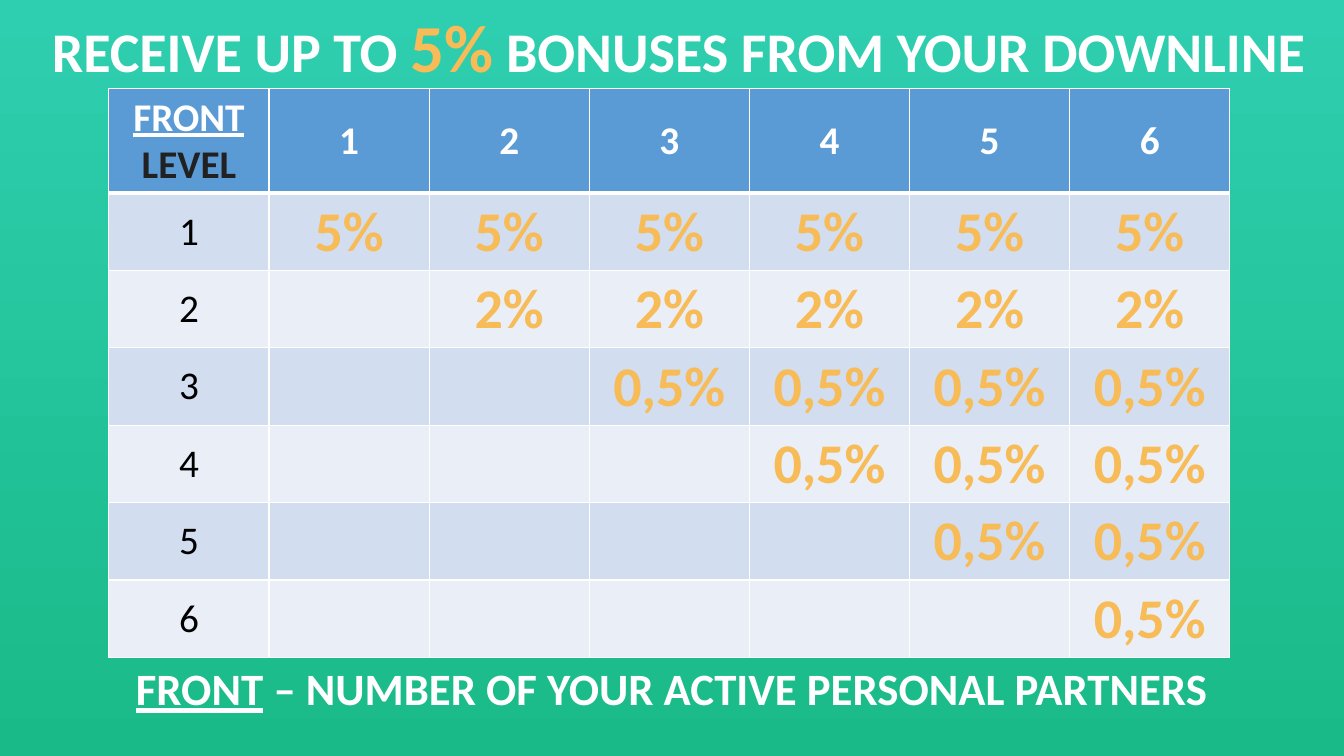
from dataclasses import dataclass

from lxml import etree
from pptx import Presentation
from pptx import util as u
from pptx.dml.color import RGBColor
from pptx.enum import text
from pptx.oxml import ns


@dataclass(frozen=True)
class Theme:
    """Colours, type sizes and font of the slide."""
    font: str = "Calibri"
    white: str = "FFFFFF"
    black: str = "000000"
    dark: str = "212121"
    accent: str = "F7BB57"
    header: str = "5B9BD5"
    bands: tuple = ("D2DEEF", "EAEFF7")
    gradient: tuple = ("2ECEB0", "1ABA88")
    title: int = 40
    highlight: int = 48
    label: int = 28
    rate: int = 40
    caption: int = 32


THEME = Theme()
RATES = ("5%", "2%", "0,5%", "0,5%", "0,5%", "0,5%")


def paint_background(slide):
    """Fill the slide with a gradient running from top to bottom."""
    fill = slide.background.fill
    fill.gradient()
    fill.gradient_angle = 270
    for position, (stop, color) in enumerate(zip(fill.gradient_stops, THEME.gradient)):
        stop.position = position
        stop.color.rgb = RGBColor.from_string(color)


def style_font(font, size, color, bold=True):
    """Set the typeface, size, colour and weight of a font."""
    font.name = THEME.font
    font.size = u.Pt(size)
    font.bold = bold
    font.color.rgb = RGBColor.from_string(color)


def place_shape(shape, left, top, width, height):
    """Move a shape to its box, given in inches."""
    shape.left, shape.top = u.Inches(left), u.Inches(top)
    shape.width, shape.height = u.Inches(width), u.Inches(height)


def write_line(shape, size):
    """Prepare a centred one-line frame and return its paragraph."""
    frame = shape.text_frame
    frame.word_wrap = True
    frame.auto_size = text.MSO_AUTO_SIZE.SHAPE_TO_FIT_TEXT
    frame.vertical_anchor = text.MSO_ANCHOR.TOP
    paragraph = frame.paragraphs[0]
    paragraph.alignment = text.PP_ALIGN.CENTER
    style_font(paragraph.font, size, THEME.white)
    return paragraph


def add_title(slide, left, top, width, height):
    """Write the heading with its enlarged percentage."""
    place_shape(slide.shapes.title, left, top, width, height)
    paragraph = write_line(slide.shapes.title, THEME.title)
    paragraph.add_run().text = "RECEIVE UP TO "
    percentage = paragraph.add_run()
    percentage.text = "5%"
    style_font(percentage.font, THEME.highlight, THEME.accent)
    paragraph.add_run().text = " BONUSES FROM YOUR DOWNLINE"


def add_caption(slide, left, top, width, height):
    """Write the explanation of the word FRONT."""
    box = slide.shapes.add_textbox(*map(u.Inches, (left, top, width, height)))
    paragraph = write_line(box, THEME.caption)
    term = paragraph.add_run()
    term.text = "FRONT"
    term.font.underline = True
    paragraph.add_run().text = " – NUMBER OF YOUR ACTIVE PERSONAL PARTNERS"


def set_borders(cell, top, bottom):
    """Draw white cell borders with the given top and bottom widths."""
    properties = cell._tc.get_or_add_tcPr()
    widths = {"L": 1, "R": 1, "T": top, "B": bottom}
    for index, (side, width) in enumerate(widths.items()):
        line = etree.Element(ns.qn(f"a:ln{side}"), w=str(u.Pt(width)))
        fill = etree.SubElement(line, ns.qn("a:solidFill"))
        etree.SubElement(fill, ns.qn("a:srgbClr"), val=THEME.white)
        properties.insert(index, line)


def write_cell(cell, content, size, color, bold=True):
    """Write centred text in a table cell."""
    cell.text = content
    cell.vertical_anchor = text.MSO_ANCHOR.MIDDLE
    for paragraph in cell.text_frame.paragraphs:
        paragraph.alignment = text.PP_ALIGN.CENTER
        style_font(paragraph.font, size, color, bold)


def write_corner(cell):
    """Label both axes of the table in its corner cell."""
    write_cell(cell, "FRONT\nLEVEL", THEME.label, THEME.white)
    cell.vertical_anchor = text.MSO_ANCHOR.TOP
    front, level = cell.text_frame.paragraphs
    front.font.underline = True
    level.font.color.rgb = RGBColor.from_string(THEME.dark)


def add_bonus_table(slide, left, top, width, height, header_height=1.03):
    """Build the grid of bonus rates by level and front."""
    count = len(RATES) + 1
    box = map(u.Inches, (left, top, width, height))
    table = slide.shapes.add_table(count, count, *box).table
    for column in table.columns:
        column.width = u.Inches(width / count)
    for row in table.rows:
        row.height = u.Inches((height - header_height) / len(RATES))
    table.rows[0].height = u.Inches(header_height)

    for level in range(count):
        color = THEME.bands[(level - 1) % 2] if level else THEME.header
        for front in range(count):
            cell = table.cell(level, front)
            cell.fill.solid()
            cell.fill.fore_color.rgb = RGBColor.from_string(color)
            set_borders(cell, 3 if level == 1 else 1, 3 if level == 0 else 1)
            if level == front == 0:
                write_corner(cell)
            elif level == 0:
                write_cell(cell, str(front), THEME.label, THEME.white)
            elif front == 0:
                write_cell(cell, str(level), THEME.label, THEME.black, bold=False)
            elif front >= level:
                write_cell(cell, RATES[level - 1], THEME.rate, THEME.accent)


def main():
    """Build the bonus slide and save it."""
    presentation = Presentation()
    presentation.slide_width = u.Inches(13.33)
    presentation.slide_height = u.Inches(7.5)
    slide = presentation.slides.add_slide(presentation.slide_layouts[5])
    paint_background(slide)
    add_title(slide, 0, 0, 13.46, 0.91)
    add_bonus_table(slide, 1.08, 0.88, 11.12, 5.64)
    add_caption(slide, 0, 6.51, 13.33, 0.64)
    presentation.save("out.pptx")


if __name__ == "__main__":
    main()
